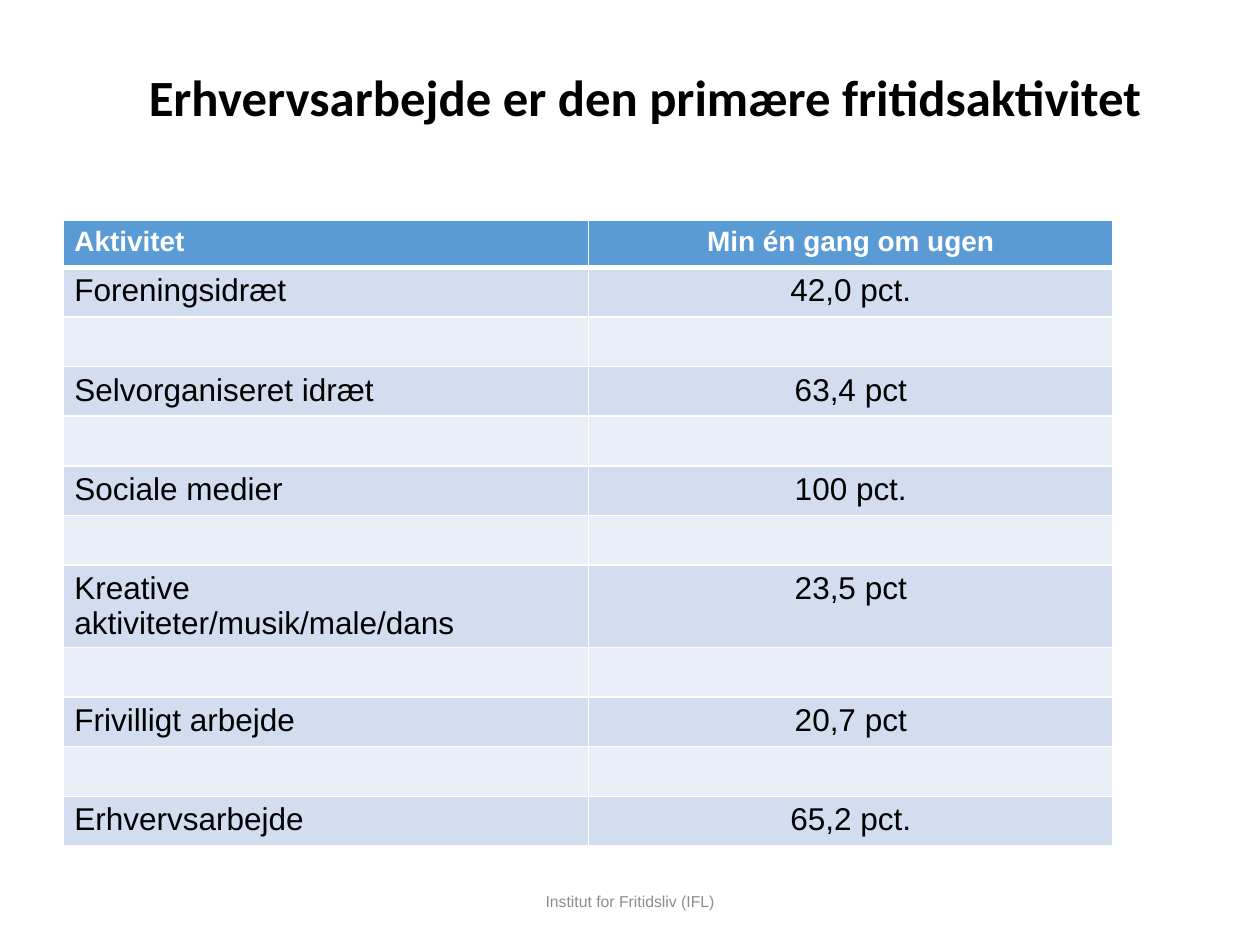
from lxml.etree import SubElement
from pptx import Presentation
from pptx.dml.color import RGBColor
from pptx.enum.text import MSO_ANCHOR, PP_ALIGN
from pptx.oxml import parse_xml
from pptx.oxml.ns import nsdecls, qn
from pptx.util import Cm, Pt

COLORS = {
    "title": "000000", "header": "5B9BD5", "header_text": "FFFFFF",
    "filled_row": "D2DEEF", "empty_row": "EAEFF7", "text": "000000",
    "border": "FFFFFF", "footer": "8C8C8C",
}
ACTIVITIES = [
    ("Foreningsidræt", "42,0 pct."),
    ("Selvorganiseret idræt", "63,4 pct"),
    ("Sociale medier", "100 pct."),
    ("Kreative aktiviteter/musik/male/dans", "23,5 pct"),
    ("Frivilligt arbejde", "20,7 pct"),
    ("Erhvervsarbejde", "65,2 pct."),
]


def style_text(p, font, size, color, bold=False):
    for r in p.runs:
        r.font.name = font
        r.font.size = Pt(size)
        r.font.bold = bold
        r.font.color.rgb = RGBColor.from_string(COLORS[color])


def set_borders(cell, bottom):
    """Draw 1 pt cell borders, with the bottom one at its own width."""
    tc_pr = cell._tc.get_or_add_tcPr()
    for i, (side, width) in enumerate([("L", 1), ("R", 1), ("T", 1), ("B", bottom)]):
        tc_pr.insert(i, parse_xml(
            f'<a:ln{side} {nsdecls("a")} w="{Pt(width)}"><a:solidFill>'
            f'<a:srgbClr val="{COLORS["border"]}"/></a:solidFill></a:ln{side}>'))


prs = Presentation()
prs.slide_width, prs.slide_height = Cm(25.4), Cm(19.05)
s = prs.slides.add_slide(prs.slide_layouts[5])

# Title
title = s.shapes.title
title.left, title.top, title.width, title.height = Cm(1.7), Cm(0.64), Cm(22.63), Cm(2.77)
tf = title.text_frame
tf.text = "Erhvervsarbejde er den primære fritidsaktivitet"
tf.vertical_anchor = MSO_ANCHOR.MIDDLE
p = tf.paragraphs[0]
p.alignment = PP_ALIGN.CENTER
p.line_spacing = 0.9
style_text(p, "Calibri", 29, "title", bold=True)

# Table: an empty row separates the activities
rows = [("Aktivitet", "Min én gang om ugen")]
for activity in ACTIVITIES:
    rows += [activity, ("", "")]
rows.pop()

table = s.shapes.add_table(len(rows), 2, Cm(1.28), Cm(4.45), Cm(21.16), Cm(11.94)).table
for column in table.columns:
    column.width = Cm(10.58)
for i, values in enumerate(rows):
    is_header = i == 0
    table.rows[i].height = Cm(0.94 if is_header else 1)
    fill = "header" if is_header else "filled_row" if values[0] else "empty_row"
    for j, value in enumerate(values):
        cell = table.cell(i, j)
        cell.margin_left = cell.margin_right = Cm(0.22)
        cell.margin_top = cell.margin_bottom = Cm(0.12)
        cell.fill.solid()
        cell.fill.fore_color.rgb = RGBColor.from_string(COLORS[fill])
        set_borders(cell, bottom=3 if is_header else 1)
        p = cell.text_frame.paragraphs[0]
        p.alignment = PP_ALIGN.CENTER if j else PP_ALIGN.LEFT
        if value:
            p.text = value
            style_text(p, "Arial", 16 if is_header else 18,
                       "header_text" if is_header else "text", bold=is_header)
        else:
            # Keeps an empty row from growing past its height
            SubElement(p._p, qn("a:endParaRPr"), sz="1600")

# Footer
footer = s.shapes.add_textbox(Cm(8.41), Cm(17.65), Cm(8.58), Cm(1.02))
tf = footer.text_frame
tf.word_wrap = True
tf.vertical_anchor = MSO_ANCHOR.MIDDLE
tf.text = "Institut for Fritidsliv (IFL)"
p = tf.paragraphs[0]
p.alignment = PP_ALIGN.CENTER
style_text(p, "Arial", 9, "footer")

prs.save("out.pptx")
